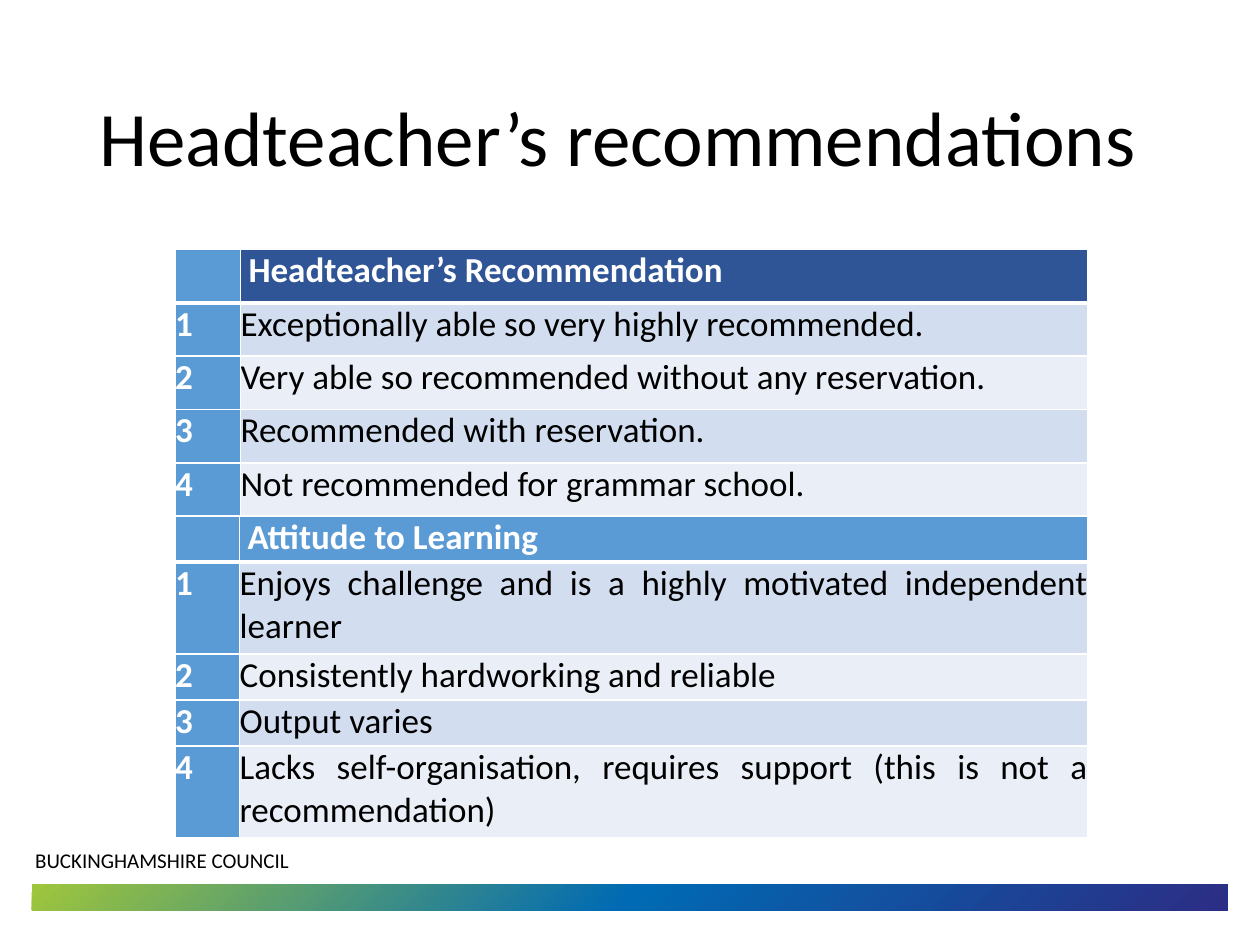
from lxml.etree import SubElement
from pptx import Presentation
from pptx.dml.color import RGBColor
from pptx.enum.shapes import MSO_SHAPE
from pptx.enum.text import MSO_ANCHOR, PP_ALIGN
from pptx.oxml import parse_xml
from pptx.oxml.ns import nsdecls, qn
from pptx.util import Cm, Pt

BLACK, WHITE = "000000", "FFFFFF"
BLUE, NAVY = "5B9BD5", "2F5597"
BANDS = ["D2DEEF", "EAEFF7"]


def colour(value):
    return RGBColor.from_string(value)


class SlideBuilder:
    font = "Calibri"

    def __init__(self, page):
        self.page = page

    def style(self, para, size, ink, bold=False):
        for span in para.runs:
            span.font.name = self.font
            span.font.size = Pt(size)
            span.font.bold = bold
            span.font.color.rgb = colour(ink)

    def text(self, left, top, width, height, words, size, anchor=MSO_ANCHOR.TOP, spacing=1.0):
        box = self.page.shapes.add_textbox(Cm(left), Cm(top), Cm(width), Cm(height))
        frame = box.text_frame
        frame.word_wrap = True
        frame.vertical_anchor = anchor
        frame.text = words
        para = frame.paragraphs[0]
        para.line_spacing = spacing
        self.style(para, size, BLACK)

    def gradient_bar(self, left, top, width, height, stops):
        bar = self.page.shapes.add_shape(
            MSO_SHAPE.RECTANGLE, Cm(left), Cm(top), Cm(width), Cm(height)
        )
        bar.shadow.inherit = False
        bar.line.fill.background()
        marks = "".join(
            f'<a:gs pos="{position * 1000}"><a:srgbClr val="{value}"/></a:gs>'
            for position, value in stops
        )
        gradient = parse_xml(
            f'<a:gradFill {nsdecls("a")}><a:gsLst>{marks}</a:gsLst>'
            '<a:lin ang="2700000" scaled="0"/></a:gradFill>'
        )
        bar._element.spPr.find(qn("a:prstGeom")).addnext(gradient)

    def borders(self, cell, bottom):
        properties = cell._tc.get_or_add_tcPr()
        for position, (side, width) in enumerate(
            [("lnL", 1), ("lnR", 1), ("lnT", 1), ("lnB", bottom)]
        ):
            line = parse_xml(f'<a:{side} {nsdecls("a")} w="{Pt(width)}"/>')
            solid = SubElement(line, qn("a:solidFill"))
            SubElement(solid, qn("a:srgbClr")).set("val", WHITE)
            properties.insert(position, line)

    def cell(self, cell, words, fill, ink, bold, align, indent, bottom):
        cell.margin_top = cell.margin_right = cell.margin_bottom = 0
        cell.margin_left = Cm(indent)
        cell.fill.solid()
        cell.fill.fore_color.rgb = colour(fill)
        self.borders(cell, bottom)
        cell.text_frame.text = words
        para = cell.text_frame.paragraphs[0]
        para.alignment = align
        self.style(para, 20, ink, bold)

    def grades(self, left, top, columns, heights, heading, heading_fill, entries, align):
        frame = self.page.shapes.add_table(
            len(heights), len(columns), Cm(left), Cm(top), Cm(sum(columns)), Cm(sum(heights))
        )
        table = frame.table
        for column, width in zip(table.columns, columns):
            column.width = Cm(width)
        for row, height in zip(table.rows, heights):
            row.height = Cm(height)
        self.cell(table.cell(0, 0), "", BLUE, WHITE, True, align, 0, 3)
        self.cell(table.cell(0, 1), heading, heading_fill, WHITE, True, align, 0.16, 3)
        for number, entry in enumerate(entries, 1):
            band = BANDS[(number - 1) % 2]
            self.cell(table.cell(number, 0), str(number), BLUE, WHITE, True, align, 0, 1)
            self.cell(table.cell(number, 1), entry, band, BLACK, False, align, 0, 1)


def main():
    deck = Presentation()
    deck.slide_width, deck.slide_height = Cm(25.4), Cm(19.05)
    builder = SlideBuilder(deck.slides.add_slide(deck.slide_layouts[6]))

    builder.gradient_bar(
        0.64, 17.83, 24.1, 0.52, [(0, "9FC63B"), (50, "006AB4"), (100, "2C2D84")]
    )
    builder.text(0.46, 16.97, 12.2, 0.76, "BUCKINGHAMSHIRE COUNCIL", 12)
    builder.text(
        1.75, 1.02, 21.9, 3.68, "Headteacher’s recommendations", 44, MSO_ANCHOR.MIDDLE, 0.9
    )
    builder.grades(
        3.53, 5.03, [1.32, 17.08], [1.075] * 5, "Headteacher’s Recommendation", NAVY,
        [
            "Exceptionally able so very highly recommended.",
            "Very able so recommended without any reservation.",
            "Recommended with reservation.",
            "Not recommended for grammar school.",
        ],
        PP_ALIGN.LEFT,
    )
    short, tall = 0.93, 1.85
    builder.grades(
        3.53, 10.4, [1.3, 17.1], [short, tall, short, short, tall], "Attitude to Learning", BLUE,
        [
            "Enjoys challenge and is a highly motivated independent learner",
            "Consistently hardworking and reliable",
            "Output varies",
            "Lacks self-organisation, requires support (this is not a recommendation)",
        ],
        PP_ALIGN.JUSTIFY,
    )
    deck.save("out.pptx")


if __name__ == "__main__":
    main()
